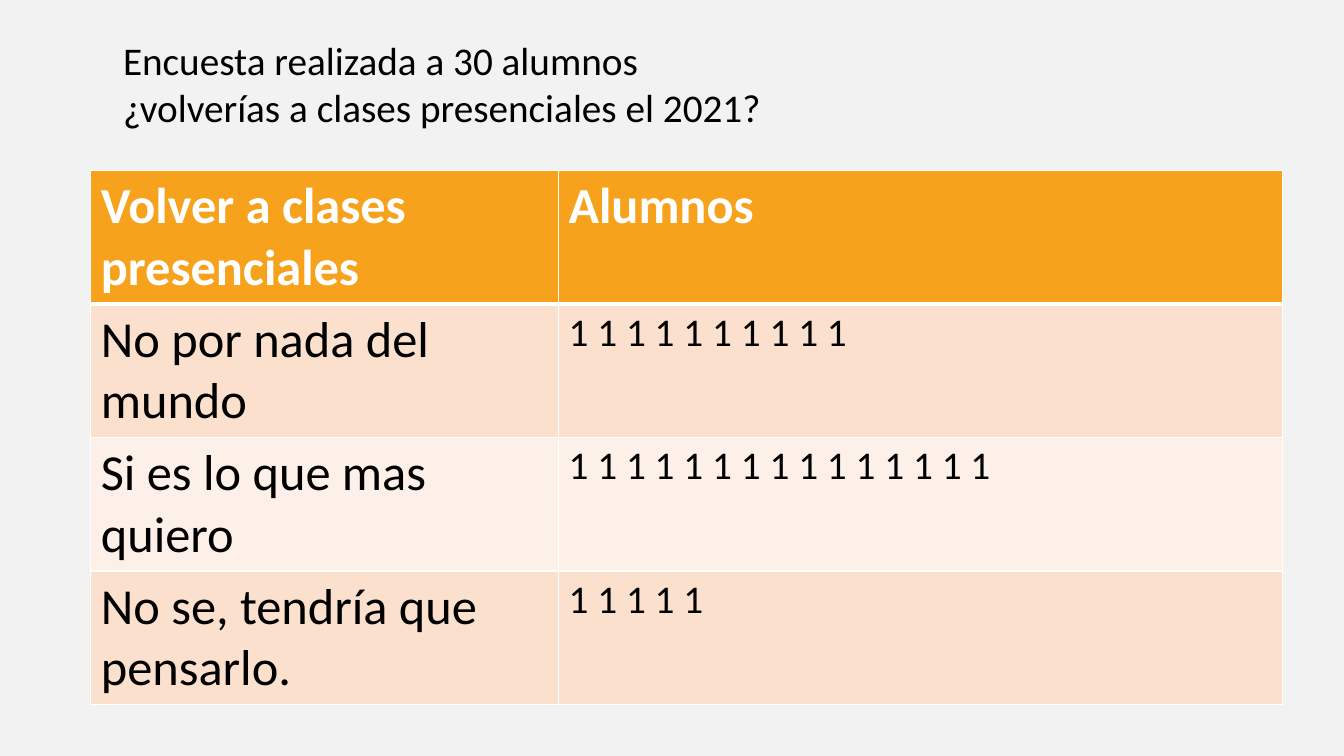
from lxml import etree
from pptx import Presentation
from pptx.dml.color import RGBColor
from pptx.enum.text import MSO_ANCHOR, MSO_AUTO_SIZE, PP_ALIGN
from pptx.oxml.ns import qn
from pptx.util import Inches, Pt

TOP = MSO_ANCHOR.TOP
LEFT = PP_ALIGN.LEFT
GROW = MSO_AUTO_SIZE.SHAPE_TO_FIT_TEXT

FONT = "Calibri"
COLORS = {
    "background": "F2F2F2",
    "header": "F6A21D",
    "band_dark": "FBE0CD",
    "band_light": "FDF0E8",
    "white": "FFFFFF",
    "black": "000000",
}

TITLE_LINES = [
    "Encuesta realizada a 30 alumnos",
    "¿volverías a clases presenciales el 2021?",
]
HEADERS = ["Volver a clases presenciales", "Alumnos"]
ANSWERS = [
    ("No por nada del mundo", 10),
    ("Si es lo que mas quiero", 15),
    ("No se, tendría que pensarlo.", 5),
]


def color(name):
    return RGBColor.from_string(COLORS[name])


def format_para(para, size, color_name, bold=False):
    para.alignment = LEFT
    para.font.name = FONT
    para.font.size = Pt(size)
    para.font.bold = bold
    para.font.color.rgb = color(color_name)


def add_title(page, left, top, width, height):
    title = page.shapes.title
    title.left, title.top = Inches(left), Inches(top)
    title.width, title.height = Inches(width), Inches(height)
    frame = title.text_frame
    frame.text = "\n".join(TITLE_LINES)
    frame.word_wrap = True
    frame.auto_size = GROW
    frame.vertical_anchor = TOP
    for para in frame.paragraphs:
        format_para(para, 28, "black")


def set_borders(cell, top, bottom):
    """Draw white cell borders; top and bottom widths are in points."""
    properties = cell._tc.get_or_add_tcPr()
    widths = {"a:lnL": 1, "a:lnR": 1, "a:lnT": top, "a:lnB": bottom}
    for position, (tag, width) in enumerate(widths.items()):
        line = etree.Element(qn(tag), w=str(Pt(width)))
        fill = etree.SubElement(line, qn("a:solidFill"))
        etree.SubElement(fill, qn("a:srgbClr"), val=COLORS["white"])
        properties.insert(position, line)


def add_survey_table(page, left, top, width, height):
    rows = [HEADERS] + [(answer, " ".join("1" * votes)) for answer, votes in ANSWERS]
    table = page.shapes.add_table(
        len(rows), len(HEADERS),
        Inches(left), Inches(top), Inches(width), Inches(height),
    ).table
    answer_width = 4.64
    table.columns[0].width = Inches(answer_width)
    table.columns[1].width = Inches(width - answer_width)

    for row_index, row in enumerate(rows):
        is_header = row_index == 0
        band = "band_dark" if row_index % 2 else "band_light"
        for column_index, text in enumerate(row):
            cell = table.cell(row_index, column_index)
            cell.text = text
            cell.fill.solid()
            cell.fill.fore_color.rgb = color("header" if is_header else band)
            set_borders(cell, top=3 if row_index == 1 else 1, bottom=3 if is_header else 1)
            size = 36 if is_header or column_index == 0 else 28
            format_para(cell.text_frame.paragraphs[0], size,
                        "white" if is_header else "black", bold=is_header)


def build_survey_slide(deck):
    page = deck.slides.add_slide(deck.slide_layouts[5])
    page.background.fill.solid()
    page.background.fill.fore_color.rgb = color("background")
    add_survey_table(page, 0.9, 1.69, 11.82, 5.3)
    add_title(page, 1.12, 0.31, 7.07, 1.04)


def main():
    deck = Presentation()
    deck.slide_width, deck.slide_height = Inches(13.33), Inches(7.5)
    build_survey_slide(deck)
    deck.save("out.pptx")


if __name__ == "__main__":
    main()
